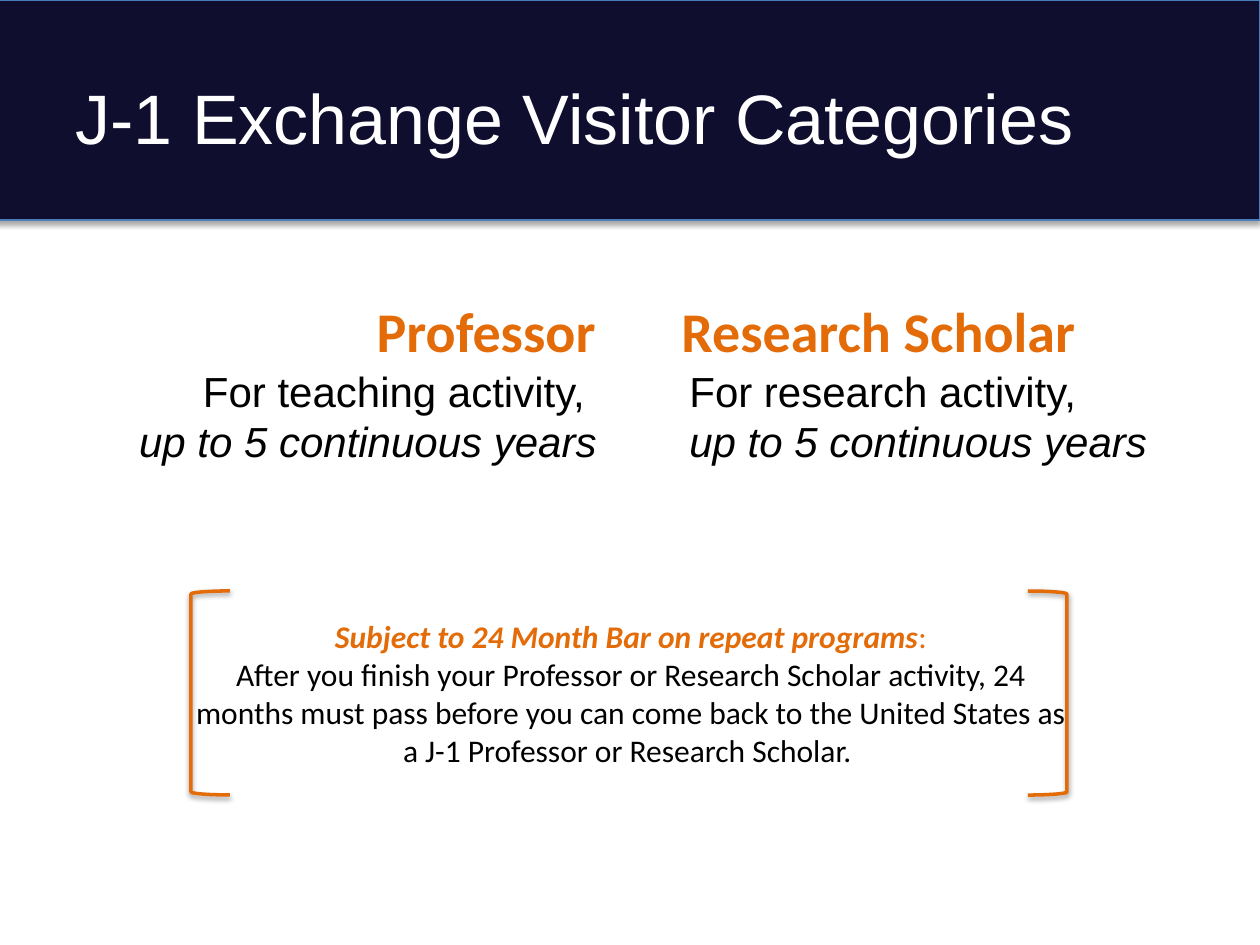
from lxml.etree import SubElement
from pptx import Presentation
from pptx.dml.color import RGBColor
from pptx.enum.shapes import MSO_SHAPE as Shape
from pptx.enum.text import MSO_ANCHOR as Anchor, PP_ALIGN as Align
from pptx.oxml.ns import qn
from pptx.util import Emu, Pt

PX_PER_INCH = 126
NAVY, BLUE, ORANGE, WHITE, BLACK = "100E2F", "4A7DBA", "E36C09", "FFFFFF", "000000"


def px(length):
    return Emu(round(length * 914400 / PX_PER_INCH))


def color(hex_code):
    return RGBColor.from_string(hex_code)


class SlideBuilder:
    heading_font, text_font = "Calibri", "Arial"

    def __init__(self, slide):
        self.slide = slide

    def place(self, shape, box):
        shape.left, shape.top, shape.width, shape.height = map(px, box)

    def run(self, paragraph, text, font, size, hex_code, bold=False, italic=False):
        run = paragraph.add_run()
        run.text = text
        run.font.name, run.font.size = font, Pt(size)
        run.font.bold, run.font.italic = bold, italic
        run.font.color.rgb = color(hex_code)

    def title(self, text, box):
        title = self.slide.shapes.title
        self.place(title, box)
        title.text_frame.vertical_anchor = Anchor.MIDDLE
        paragraph = title.text_frame.paragraphs[0]
        paragraph.alignment = Align.LEFT
        self.run(paragraph, text, self.text_font, 40, WHITE)

    def text(self, box, paragraphs, align=Align.LEFT, indent=0):
        """Each paragraph is a list of runs; None stands for a line break."""
        frame = self.slide.shapes.add_textbox(*map(px, box)).text_frame
        frame.word_wrap = True
        for i, runs in enumerate(paragraphs):
            paragraph = frame.add_paragraph() if i else frame.paragraphs[0]
            paragraph.alignment = align
            if indent:
                paragraph._p.get_or_add_pPr().set("marL", str(px(indent)))
            for style in runs:
                if style is None:
                    paragraph.add_line_break()
                else:
                    self.run(paragraph, *style)

    def shadow(self, shape, blur, distance, opacity):
        shape.shadow.inherit = False
        effects = shape._element.spPr.find(qn("a:effectLst"))
        outer = SubElement(effects, qn("a:outerShdw"), blurRad=str(Pt(blur)),
                           dist=str(Pt(distance)), dir="5400000", rotWithShape="0")
        black = SubElement(outer, qn("a:srgbClr"), val=BLACK)
        SubElement(black, qn("a:alpha"), val=str(opacity * 1000))

    def band(self, box):
        band = self.slide.shapes.add_shape(Shape.RECTANGLE, *map(px, box))
        band.fill.solid()
        band.fill.fore_color.rgb = color(NAVY)
        band.line.color.rgb, band.line.width = color(BLUE), Pt(0.75)
        self.shadow(band, 3.1, 1.8, 35)
        # Send the band behind the title
        self.slide.shapes._spTree.insert(2, band._element)

    def bracket(self, box, rotation):
        bracket = self.slide.shapes.add_shape(Shape.LEFT_BRACKET, *map(px, box))
        bracket.adjustments[0] = 0.08
        bracket.rotation = rotation
        bracket.fill.background()
        bracket.line.color.rgb, bracket.line.width = color(ORANGE), Pt(2)
        self.shadow(bracket, 3.1, 1.6, 38)


def main():
    deck = Presentation()
    deck.slide_width, deck.slide_height = px(1260), px(945)
    page = SlideBuilder(deck.slides.add_slide(deck.slide_layouts[5]))
    heading, body = page.heading_font, page.text_font

    # Title band
    page.band((-5, 0, 1265, 220))
    page.title("J-1 Exchange Visitor Categories", (63, 38, 1134, 158))

    # Two visitor categories, side by side
    categories = [
        ("Professor", "teaching", 244, 364, 63, Align.RIGHT, 0),
        ("Research Scholar", "research", 669, 512, 669, Align.LEFT, 8),
    ]
    for name, activity, name_left, name_width, limit_left, align, indent in categories:
        page.text((name_left, 290, name_width, 81),
                  [[(name, heading, 32, ORANGE, True)]], align)
        page.text((limit_left, 359, 546, 184),
                  [[(f"For {activity} activity, ", body, 24, BLACK), None,
                    ("up to 5 continuous years", body, 24, BLACK, False, True)]],
                  align, indent)

    # Repeat-program rule between brackets
    page.text((183, 611, 896, 204), [
        [("Subject to 24 Month Bar on repeat programs", heading, 18, ORANGE, True, True),
         (":", heading, 18, ORANGE)],
        [("After you finish your Professor or Research Scholar activity, 24 months must "
          "pass before you can come back to the United States as a J-1 Professor or "
          "Research Scholar. ", heading, 18, BLACK)],
    ], Align.CENTER)
    for left, rotation in ((191, 0), (1028, 180)):
        page.bracket((left, 591, 39, 204), rotation)

    deck.save("out.pptx")


if __name__ == "__main__":
    main()
